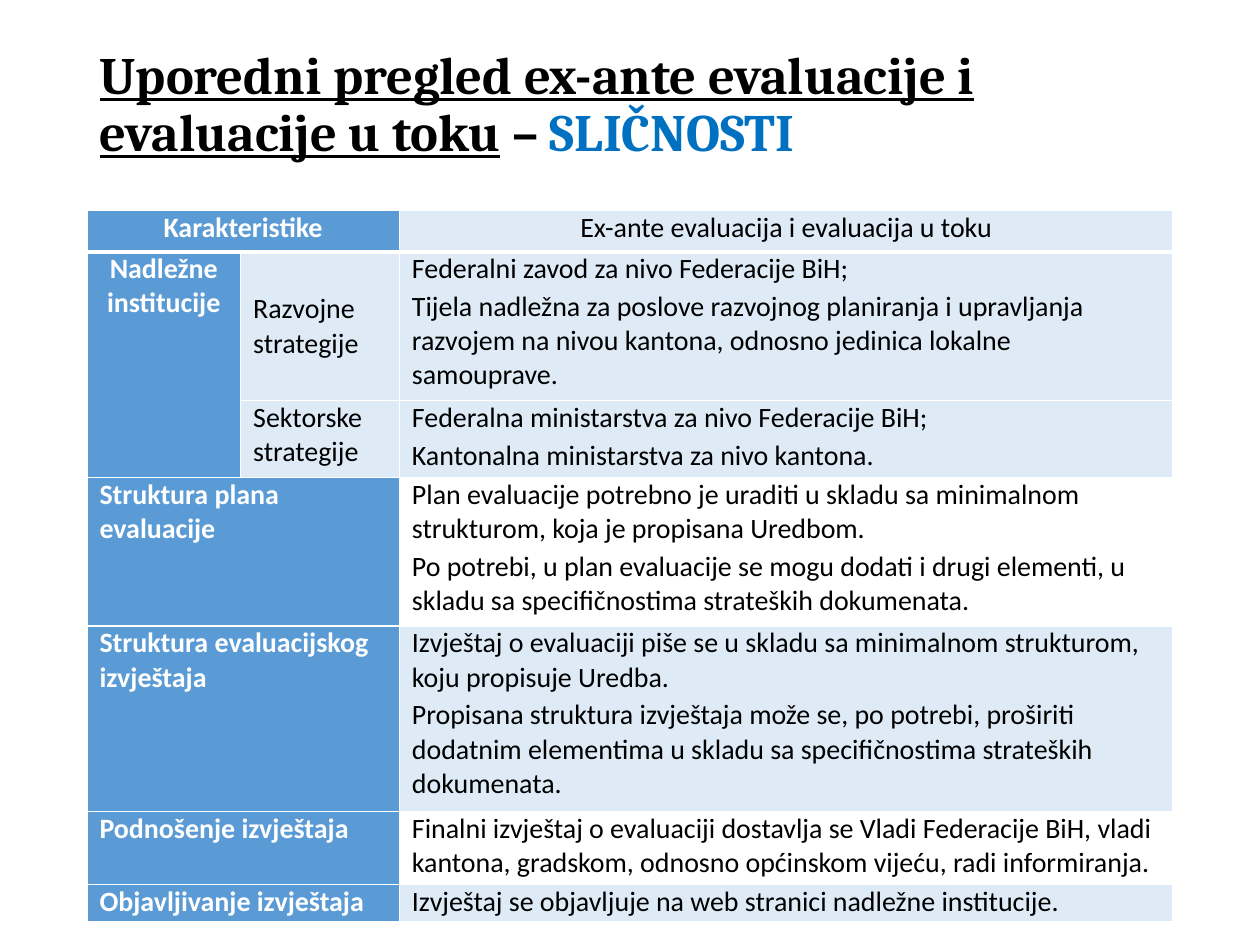
"""Build a slide comparing ex-ante and ongoing evaluation in a table."""
from dataclasses import dataclass

from lxml import etree
from pptx import Presentation
from pptx import util as u
from pptx.dml.color import RGBColor
from pptx.enum import text
from pptx.oxml import ns

COLORS = {"label": "5B9BD5", "tint": "DEEBF7", "white": "FFFFFF",
          "black": "000000", "accent": "0070C0"}
SLIDE_WIDTH, SLIDE_HEIGHT = u.Inches(10), u.Inches(7.5)
LEFT, WIDTH = 0.069, 0.862
COLUMN_WIDTHS = (1.22, 1.26, 6.14)
ROW_HEIGHTS = (0.33, 1.18, 0.61, 1.18, 1.47, 0.58, 0.3)
CENTER = text.PP_ALIGN.CENTER


@dataclass(frozen=True)
class Entry:
    """Content and placement of one table cell."""
    row: int
    column: int
    paragraphs: tuple[str, ...]
    fill: str = "tint"
    rows: int = 1
    columns: int = 1
    align: text.PP_ALIGN = text.PP_ALIGN.LEFT
    anchor: text.MSO_ANCHOR = text.MSO_ANCHOR.TOP


ENTRIES = (
    Entry(0, 0, ("Karakteristike",), "label", columns=2, align=CENTER),
    Entry(0, 2, ("Ex-ante evaluacija i evaluacija u toku",), align=CENTER),
    Entry(1, 0, ("Nadležne institucije",), "label", rows=2, align=CENTER),
    Entry(1, 1, ("Razvojne strategije",), anchor=text.MSO_ANCHOR.MIDDLE),
    Entry(1, 2, (
        "Federalni zavod za nivo Federacije BiH;",
        "Tijela nadležna za poslove razvojnog planiranja i upravljanja razvojem "
        "na nivou kantona, odnosno jedinica lokalne samouprave.")),
    Entry(2, 1, ("Sektorske strategije",)),
    Entry(2, 2, (
        "Federalna ministarstva za nivo Federacije BiH;",
        "Kantonalna ministarstva za nivo kantona.")),
    Entry(3, 0, ("Struktura plana evaluacije",), "label", columns=2),
    Entry(3, 2, (
        "Plan evaluacije potrebno je uraditi u skladu sa minimalnom strukturom, "
        "koja je propisana Uredbom.",
        "Po potrebi, u plan evaluacije se mogu dodati i drugi elementi, u skladu "
        "sa specifičnostima strateških dokumenata."), "white"),
    Entry(4, 0, ("Struktura evaluacijskog izvještaja",), "label", columns=2),
    Entry(4, 2, (
        "Izvještaj o evaluaciji piše se u skladu sa minimalnom strukturom, "
        "koju propisuje Uredba.",
        "Propisana struktura izvještaja može se, po potrebi, proširiti dodatnim "
        "elementima u skladu sa specifičnostima strateških dokumenata.")),
    Entry(5, 0, ("Podnošenje izvještaja",), "label", columns=2),
    Entry(5, 2, (
        "Finalni izvještaj o evaluaciji dostavlja se Vladi Federacije BiH, vladi "
        "kantona, gradskom, odnosno općinskom vijeću, radi informiranja.",), "white"),
    Entry(6, 0, ("Objavljivanje izvještaja",), "label", columns=2),
    Entry(6, 2, ("Izvještaj se objavljuje na web stranici nadležne institucije.",)),
)


def add_text(paragraph, content: str, *, size: float, font: str, color: str,
             bold: bool = False, underline: bool = False) -> None:
    """Append a formatted run to a paragraph."""
    run = paragraph.add_run()
    run.text = content
    run.font.size, run.font.name = u.Pt(size), font
    run.font.bold, run.font.underline = bold, underline
    run.font.color.rgb = RGBColor.from_string(COLORS[color])


def set_borders(cell, top: float, bottom: float) -> None:
    """Give a cell white borders with the stated top and bottom weights."""
    properties = cell._tc.get_or_add_tcPr()
    weights = {"lnL": 1, "lnR": 1, "lnT": top, "lnB": bottom}
    for position, (side, weight) in enumerate(weights.items()):
        line = etree.Element(ns.qn(f"a:{side}"), w=str(u.Pt(weight)))
        solid = etree.SubElement(line, ns.qn("a:solidFill"))
        etree.SubElement(solid, ns.qn("a:srgbClr"), val=COLORS["white"])
        properties.insert(position, line)


def fill_entry(table, entry: Entry) -> None:
    """Merge, colour and write one entry of the table."""
    cell = table.cell(entry.row, entry.column)
    if entry.rows * entry.columns > 1:
        cell.merge(table.cell(entry.row + entry.rows - 1,
                              entry.column + entry.columns - 1))
    for row in range(entry.row, entry.row + entry.rows):
        for column in range(entry.column, entry.column + entry.columns):
            part = table.cell(row, column)
            part.fill.solid()
            part.fill.fore_color.rgb = RGBColor.from_string(COLORS[entry.fill])
            set_borders(part, 3 if row == 1 else 1, 3 if row == 0 else 1)
    cell.margin_left = cell.margin_right = u.Inches(0.1)
    cell.margin_top = cell.margin_bottom = 0
    cell.vertical_anchor = entry.anchor
    is_label = entry.fill == "label"
    is_detail = entry.column == 2
    frame = cell.text_frame
    for index, content in enumerate(entry.paragraphs):
        paragraph = frame.add_paragraph() if index else frame.paragraphs[0]
        paragraph.alignment = entry.align
        paragraph.space_before = u.Pt(1 if is_detail else 0)
        paragraph.space_after = u.Pt(1 if is_detail else 6)
        add_text(paragraph, content, size=16, font="Calibri", bold=is_label,
                 color="white" if is_label else "black")


def add_title(slide) -> None:
    """Place and write the slide title."""
    title = slide.shapes.title
    title.left, title.top = int(SLIDE_WIDTH * LEFT), u.Inches(0.32)
    title.width, title.height = int(SLIDE_WIDTH * WIDTH), u.Inches(1.02)
    frame = title.text_frame
    frame.word_wrap = True
    frame.auto_size = text.MSO_AUTO_SIZE.NONE
    frame.vertical_anchor = text.MSO_ANCHOR.BOTTOM
    heading = frame.paragraphs[0]
    heading.alignment, heading.line_spacing = text.PP_ALIGN.LEFT, 0.9
    style = {"size": 30, "font": "Cambria", "bold": True}
    add_text(heading, "Uporedni pregled ex-ante evaluacije i evaluacije u toku",
             color="black", underline=True, **style)
    add_text(heading, " – ", color="black", **style)
    add_text(heading, "SLIČNOSTI", color="accent", **style)


def add_comparison(slide) -> None:
    """Add the comparison table below the title."""
    table = slide.shapes.add_table(
        len(ROW_HEIGHTS), len(COLUMN_WIDTHS), int(SLIDE_WIDTH * LEFT), u.Inches(1.67),
        int(SLIDE_WIDTH * WIDTH), u.Inches(sum(ROW_HEIGHTS))).table
    table.first_row = table.horz_banding = False
    for column, width in zip(table.columns, COLUMN_WIDTHS):
        column.width = u.Inches(width)
    for row, height in zip(table.rows, ROW_HEIGHTS):
        row.height = u.Inches(height)
    for entry in ENTRIES:
        fill_entry(table, entry)


def main() -> None:
    """Build and save the presentation."""
    presentation = Presentation()
    presentation.slide_width, presentation.slide_height = SLIDE_WIDTH, SLIDE_HEIGHT
    slide = presentation.slides.add_slide(presentation.slide_layouts[5])
    add_title(slide)
    add_comparison(slide)
    presentation.save("out.pptx")


if __name__ == "__main__":
    main()
